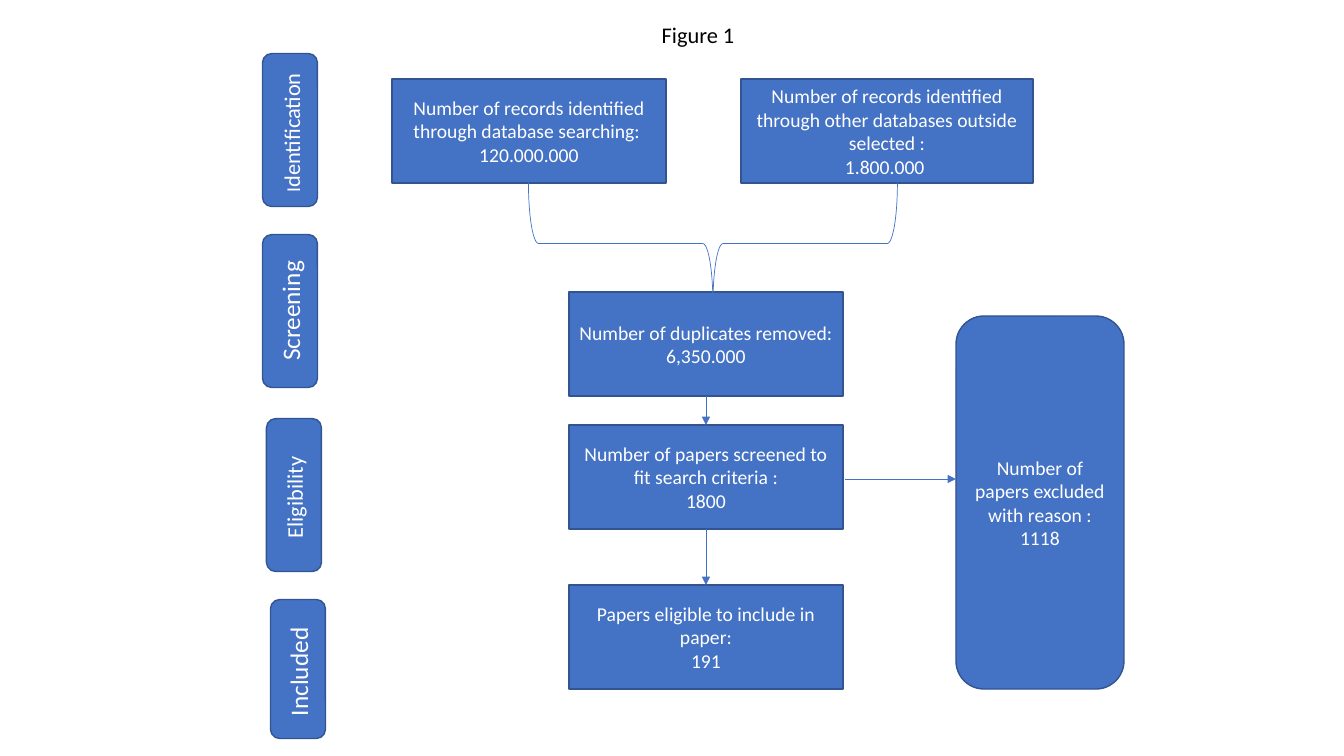
from lxml import etree
from pptx import Presentation
from pptx import util as u
from pptx.dml import color
from pptx.enum import shapes, text
from pptx.oxml import ns

EMU_PER_PX = 914400 / 100.8
FONT = "Calibri"
BLUE, EDGE, WHITE, BLACK = "4472C4", "325491", "FFFFFF", "000000"
BOX_W, BOX_H = 274, 104
STAGE_H = 55
FLOW_X = 569


def px(n):
    return u.Emu(round(n * EMU_PER_PX))


def paint(target, hex_color):
    """Give a fill, or the colour object of a font or line, a hex colour."""
    if hasattr(target, "solid"):
        target.solid()
        target = target.fore_color
    target.rgb = color.RGBColor.from_string(hex_color)


def style_run(run, size, hex_color):
    run.font.name = FONT
    run.font.size = u.Pt(size)
    paint(run.font.color, hex_color)


def write(frame, lines, size, hex_color):
    frame.word_wrap = True
    frame.text = "\n".join(lines)
    for paragraph in frame.paragraphs:
        paragraph.alignment = text.PP_ALIGN.CENTER
        for run in paragraph.runs:
            style_run(run, size, hex_color)


def add_panel(slide, kind, left, top, width, height):
    panel = slide.shapes.add_shape(kind, px(left), px(top), px(width), px(height))
    panel.shadow.inherit = False
    paint(panel.fill, BLUE)
    paint(panel.line.color, EDGE)
    panel.line.width = u.Pt(1)
    panel.text_frame.vertical_anchor = text.MSO_ANCHOR.MIDDLE
    return panel


def add_step(slide, left, top, lines, width=BOX_W, height=BOX_H,
             kind=shapes.MSO_SHAPE.RECTANGLE):
    step = add_panel(slide, kind, left, top, width, height)
    write(step.text_frame, lines, 14, WHITE)
    return step


def add_stage(slide, center_x, center_y, length, parts):
    """Vertical label whose text reads upwards; parts are (wording, size)."""
    stage = add_panel(slide, shapes.MSO_SHAPE.ROUNDED_RECTANGLE,
                      center_x - length / 2, center_y - STAGE_H / 2, length, STAGE_H)
    stage.rotation = 270
    stage.text_frame.word_wrap = True
    paragraph = stage.text_frame.paragraphs[0]
    paragraph.alignment = text.PP_ALIGN.CENTER
    for wording, size in parts:
        run = paragraph.add_run()
        run.text = wording
        style_run(run, size, WHITE)


def add_brace(slide, left, top, width, height):
    brace = slide.shapes.add_shape(shapes.MSO_SHAPE.LEFT_BRACE,
                                   px(left), px(top), px(width), px(height))
    brace.rotation = 270
    brace.shadow.inherit = False
    brace.fill.background()
    paint(brace.line.color, BLUE)
    brace.line.width = u.Pt(0.5)


def add_arrow(slide, x1, y1, x2, y2):
    arrow = slide.shapes.add_connector(shapes.MSO_CONNECTOR.STRAIGHT,
                                       px(x1), px(y1), px(x2), px(y2))
    paint(arrow.line.color, BLUE)
    arrow.line.width = u.Pt(0.5)
    line = arrow.line._get_or_add_ln()
    etree.SubElement(line, ns.qn("a:tailEnd"), type="triangle")
    etree.SubElement(arrow._element.spPr, ns.qn("a:effectLst"))
    return arrow


def add_down_arrow(slide, upper, lower):
    arrow = add_arrow(slide, 0, 0, 0, 0)
    arrow.begin_connect(upper, 2)
    arrow.end_connect(lower, 0)


def add_title(slide, wording):
    title = slide.shapes.add_textbox(px(595), px(16), px(206), px(37))
    write(title.text_frame, [wording], 16, BLACK)


def main():
    prs = Presentation()
    prs.slide_width, prs.slide_height = px(1344), px(756)
    slide = prs.slides.add_slide(prs.slide_layouts[6])

    # Records found
    add_step(slide, 392, 79, ["Number of records identified through database searching: ",
                              "120.000.000"])
    add_step(slide, 741, 79, ["Number of records identified through other databases "
                              "outside selected :", "1.800.000 "], width=292)

    # Selection of papers
    screened = add_step(slide, FLOW_X, 425,
                        ["Number of papers screened to fit search criteria :", "1800"])
    eligible = add_step(slide, FLOW_X, 585, ["Papers eligible to include in paper:", "191"])
    duplicates = add_step(slide, FLOW_X, 292, ["Number of duplicates removed:\v6,350.000"])
    add_step(slide, 956, 316, ["Number of papers excluded with reason :", "1118"],
             width=168, height=373, kind=shapes.MSO_SHAPE.ROUNDED_RECTANGLE)

    # Stages on the left
    for center_x, center_y, length, parts in (
        (290, 130, 153, [("I", 14), ("dentification", 16), (" ", 18)]),
        (290, 311, 153, [("Screening", 18)]),
        (294, 495, 153, [("Eligibility ", 16)]),
        (298, 669, 139, [("Included ", 18)]),
    ):
        add_stage(slide, center_x, center_y, length, parts)

    # Links between steps
    add_brace(slide, 652, 59, 122, 369)
    add_down_arrow(slide, duplicates, screened)
    add_down_arrow(slide, screened, eligible)
    add_arrow(slide, 845, 479, 956, 479)

    add_title(slide, "Figure 1")
    prs.save("out.pptx")


if __name__ == "__main__":
    main()
